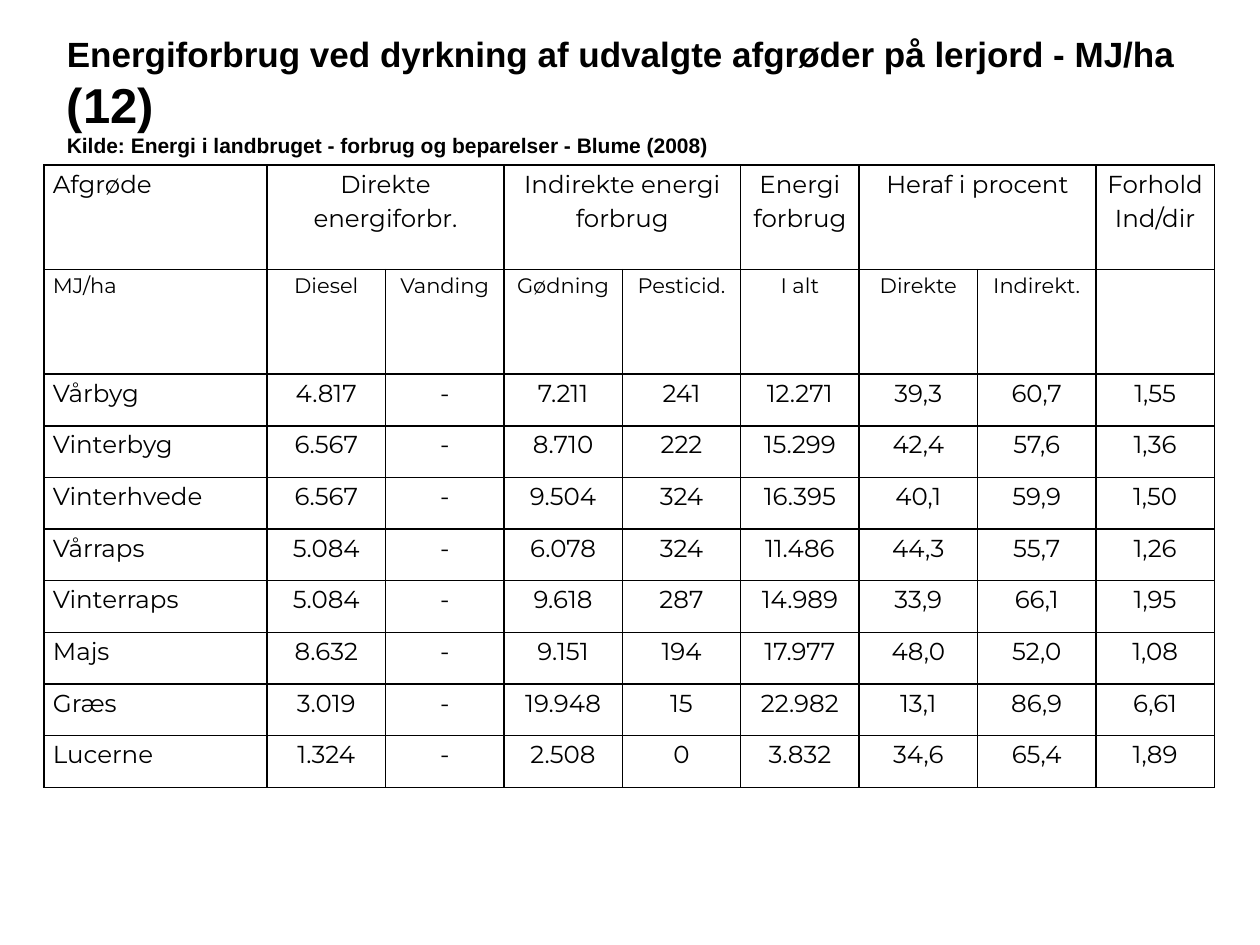
"""Build a slide with a table of energy use per crop on clay soil."""
from dataclasses import dataclass

import lxml.etree
import pptx
import pptx.dml.color
import pptx.enum.text
import pptx.oxml.ns
import pptx.slide
import pptx.table
import pptx.util
from pptx.util import Inches

BLACK = pptx.dml.color.RGBColor(0x00, 0x00, 0x00)
ALIGN = pptx.enum.text.PP_ALIGN
COLUMN_WIDTHS = [1.77] + [0.94] * 8
HEADER_HEIGHT = 0.83
CROP_HEIGHT = 0.41


@dataclass(frozen=True)
class TableRow:
    cells: tuple[str, ...]
    height: float = CROP_HEIGHT
    size: int = 14
    merged_pairs: tuple[int, ...] = ()


ROWS = [
    TableRow(
        ("Afgrøde", "Direkte energiforbr.", "", "Indirekte energi forbrug", "",
         "Energi forbrug", "Heraf i procent", "", "Forhold Ind/dir"),
        HEADER_HEIGHT, 14, (1, 3, 6),
    ),
    TableRow(
        ("MJ/ha", "Diesel", "Vanding", "Gødning", "Pesticid.", "I alt", "Direkte", "Indirekt.", ""),
        HEADER_HEIGHT, 12,
    ),
    TableRow(("Vårbyg", "4.817", "-", "7.211", "241", "12.271", "39,3", "60,7", "1,55")),
    TableRow(("Vinterbyg", "6.567", "-", "8.710", "222", "15.299", "42,4", "57,6", "1,36")),
    TableRow(("Vinterhvede", "6.567", "-", "9.504", "324", "16.395", "40,1", "59,9", "1,50")),
    TableRow(("Vårraps", "5.084", "-", "6.078", "324", "11.486", "44,3", "55,7", "1,26")),
    TableRow(("Vinterraps", "5.084", "-", "9.618", "287", "14.989", "33,9", "66,1", "1,95")),
    TableRow(("Majs", "8.632", "-", "9.151", "194", "17.977", "48,0", "52,0", "1,08")),
    TableRow(("Græs", "3.019", "-", "19.948", "15", "22.982", "13,1", "86,9", "6,61")),
    TableRow(("Lucerne", "1.324", "-", "2.508", "0", "3.832", "34,6", "65,4", "1,89")),
]


def set_borders(cell: pptx.table._Cell, color: pptx.dml.color.RGBColor, width: float) -> None:
    properties = cell._tc.get_or_add_tcPr()
    qualified = pptx.oxml.ns.qn
    for position, side in enumerate(("a:lnL", "a:lnR", "a:lnT", "a:lnB")):
        line = lxml.etree.Element(qualified(side), w=str(pptx.util.Pt(width)))
        fill = lxml.etree.SubElement(line, qualified("a:solidFill"))
        lxml.etree.SubElement(fill, qualified("a:srgbClr"), val=str(color))
        properties.insert(position, line)


def format_cell(cell: pptx.table._Cell, text: str, size: int, alignment: ALIGN) -> None:
    cell.fill.background()
    cell.margin_left = cell.margin_right = Inches(0.07)
    cell.margin_top = cell.margin_bottom = 0
    set_borders(cell, BLACK, 1)
    cell.text = text
    paragraph = cell.text_frame.paragraphs[0]
    paragraph.alignment = alignment
    paragraph.line_spacing = 1.15
    paragraph.font.name = "Montserrat"
    paragraph.font.size = pptx.util.Pt(size)
    paragraph.font.color.rgb = BLACK


def add_energy_table(slide: pptx.slide.Slide, rows: list[TableRow]) -> None:
    height = sum(row.height for row in rows)
    table = slide.shapes.add_table(
        len(rows), len(COLUMN_WIDTHS),
        Inches(0.35), Inches(1.31), Inches(sum(COLUMN_WIDTHS)), Inches(height),
    ).table
    table.first_row = table.horz_banding = False
    for column, width in zip(table.columns, COLUMN_WIDTHS):
        column.width = Inches(width)
    for row_index, row in enumerate(rows):
        table.rows[row_index].height = Inches(row.height)
        for column_index, text in enumerate(row.cells):
            alignment = ALIGN.CENTER if column_index else ALIGN.LEFT
            format_cell(table.cell(row_index, column_index), text, row.size, alignment)
        for first in row.merged_pairs:
            table.cell(row_index, first).merge(table.cell(row_index, first + 1))


def fill_title(slide: pptx.slide.Slide) -> None:
    title = slide.shapes.title
    title.left, title.top = Inches(0.43), Inches(0.2)
    title.width, title.height = Inches(9.06), Inches(1.11)
    frame = title.text_frame
    frame.word_wrap = True
    frame.auto_size = pptx.enum.text.MSO_AUTO_SIZE.SHAPE_TO_FIT_TEXT
    frame.vertical_anchor = pptx.enum.text.MSO_ANCHOR.MIDDLE
    heading, source = frame.paragraphs[0], frame.add_paragraph()
    heading.add_run().text = "Energiforbrug ved dyrkning af udvalgte afgrøder på lerjord - MJ/ha "
    number = heading.add_run()
    number.text = "(12)"
    number.font.size = pptx.util.Pt(28)
    source.text = "Kilde: Energi i landbruget - forbrug og beparelser - Blume (2008)"
    for paragraph, size in ((heading, 20), (source, 12)):
        paragraph.alignment = ALIGN.LEFT
        paragraph.font.name = "Arial"
        paragraph.font.size = pptx.util.Pt(size)
        paragraph.font.bold = True
        paragraph.font.color.rgb = BLACK


def main() -> None:
    presentation = pptx.Presentation()
    presentation.slide_width, presentation.slide_height = Inches(10), Inches(7.5)
    slide = presentation.slides.add_slide(presentation.slide_layouts.get_by_name("Title Only"))
    add_energy_table(slide, ROWS)
    fill_title(slide)
    presentation.save("out.pptx")


if __name__ == "__main__":
    main()
